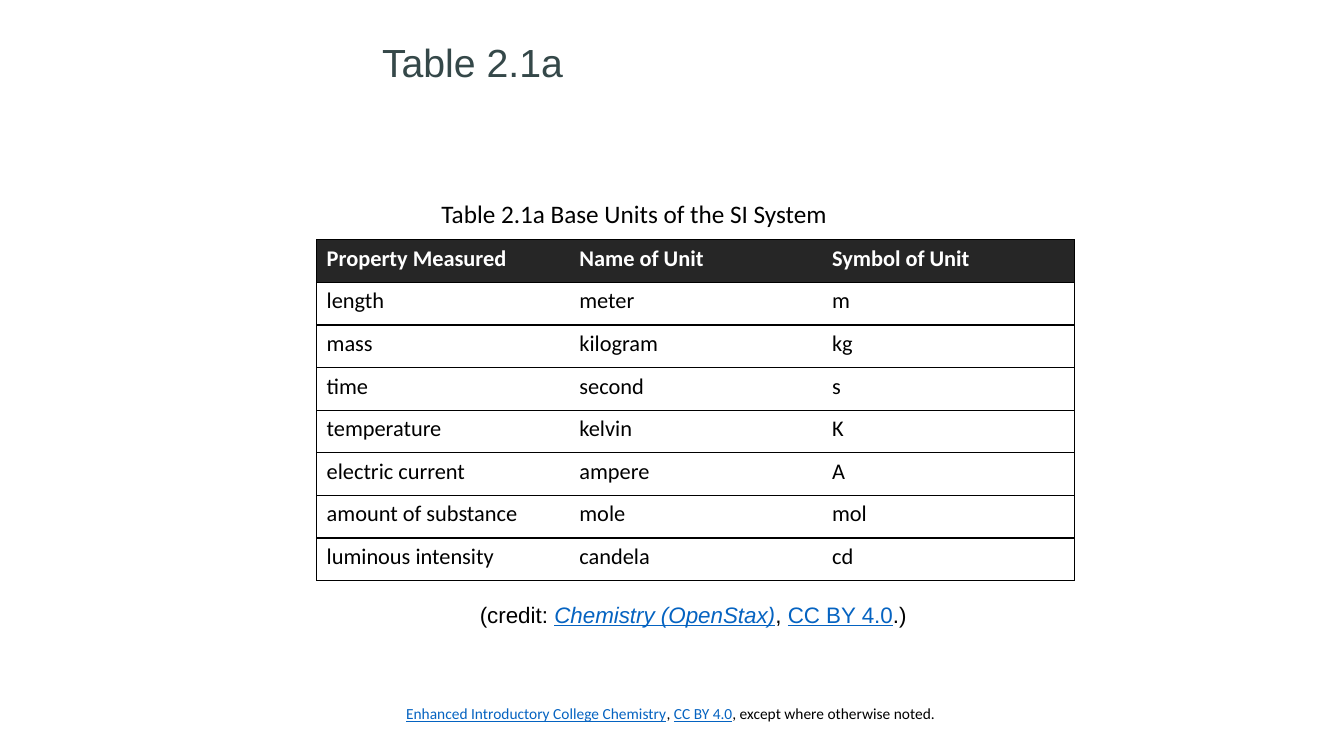
from lxml.etree import SubElement
from pptx import Presentation
from pptx.dml.color import RGBColor
from pptx.enum.text import MSO_ANCHOR, MSO_AUTO_SIZE, PP_ALIGN
from pptx.oxml.ns import qn
from pptx.util import Inches, Pt

WIDTH, HEIGHT = Inches(13.33), Inches(7.5)
COLUMN, ROW = WIDTH / 100, HEIGHT / 100
BLACK, WHITE, CHARCOAL = "000000", "FFFFFF", "262626"
SLATE, LINK = "354849", "0563C1"

UNITS = [
    ("Property Measured", "Name of Unit", "Symbol of Unit"),
    ("length", "meter", "m"),
    ("mass", "kilogram", "kg"),
    ("time", "second", "s"),
    ("temperature", "kelvin", "K"),
    ("electric current", "ampere", "A"),
    ("amount of substance", "mole", "mol"),
    ("luminous intensity", "candela", "cd"),
]


def color(value):
    return RGBColor.from_string(value)


def grid(left, top, width, height):
    return (round(left * COLUMN), round(top * ROW),
            round(width * COLUMN), round(height * ROW))


def write(para, text, size, font="Calibri", fill=BLACK, bold=False,
          italic=False, underline=False):
    span = para.add_run()
    span.text = text
    span.font.size = Pt(size)
    span.font.name = font
    span.font.color.rgb = color(fill)
    span.font.bold = bold
    span.font.italic = italic
    span.font.underline = underline


def add_title(page, box, text):
    title = page.shapes.title
    title.left, title.top, title.width, title.height = box
    frame = title.text_frame
    frame.auto_size = MSO_AUTO_SIZE.NONE
    frame.vertical_anchor = MSO_ANCHOR.BOTTOM
    para = frame.paragraphs[0]
    para.alignment = PP_ALIGN.LEFT
    para.line_spacing = 0.9
    write(para, text, 28, font="Arial", fill=SLATE)


def add_line(page, box, pieces, size, font="Calibri", wrap=True):
    frame = page.shapes.add_textbox(*box).text_frame
    frame.word_wrap = wrap
    for text, style in pieces:
        write(frame.paragraphs[0], text, size, font=font, **style)


def set_borders(cell, visible):
    properties = cell._tc.get_or_add_tcPr()
    for index, side in enumerate("LRTB"):
        line = SubElement(properties, qn(f"a:ln{side}"), w=str(Pt(1)))
        if side in visible:
            paint = SubElement(line, qn("a:solidFill"))
            SubElement(paint, qn("a:srgbClr"), val=BLACK)
        else:
            SubElement(line, qn("a:noFill"))
        properties.insert(index, line)


def add_units_table(page, box, records):
    last = len(records[0]) - 1
    table = page.shapes.add_table(len(records), last + 1, *box).table
    table.horz_banding = False
    for row, record in enumerate(records):
        header = row == 0
        for column, text in enumerate(record):
            cell = table.cell(row, column)
            cell.fill.solid()
            cell.fill.fore_color.rgb = color(CHARCOAL if header else WHITE)
            write(cell.text_frame.paragraphs[0], text, 16,
                  fill=WHITE if header else BLACK, bold=header)
            edges = "TB" + "L" * (column == 0) + "R" * (column == last)
            set_borders(cell, edges)


def build_table_slide(deck):
    page = deck.slides.add_slide(deck.slide_layouts[5])
    link = {"fill": LINK, "underline": True}
    add_line(page, grid(29.48, 92.53, 53.04, 5.33), [
        ("Enhanced Introductory College Chemistry", link),
        (", ", {}),
        ("CC BY 4.0", link),
        (", except where otherwise noted.", {}),
    ], 11)
    add_title(page, grid(27.68, 2.67, 32.26, 9.33), "Table 2.1a")
    add_line(page, grid(32.11, 25.6, 35.78, 5.33),
             [("Table 2.1a Base Units of the SI System", {})], 18)
    add_units_table(page, grid(23.56, 31.73, 56.41, 45.07), UNITS)
    add_line(page, grid(34.96, 78.8, 33.68, 4.93), [
        ("(credit: ", {}),
        ("Chemistry (OpenStax)", {**link, "italic": True}),
        (", ", {}),
        ("CC BY 4.0", link),
        (".)", {}),
    ], 16, font="Arial", wrap=False)


def main():
    deck = Presentation()
    deck.slide_width, deck.slide_height = WIDTH, HEIGHT
    build_table_slide(deck)
    deck.save("out.pptx")


if __name__ == "__main__":
    main()
